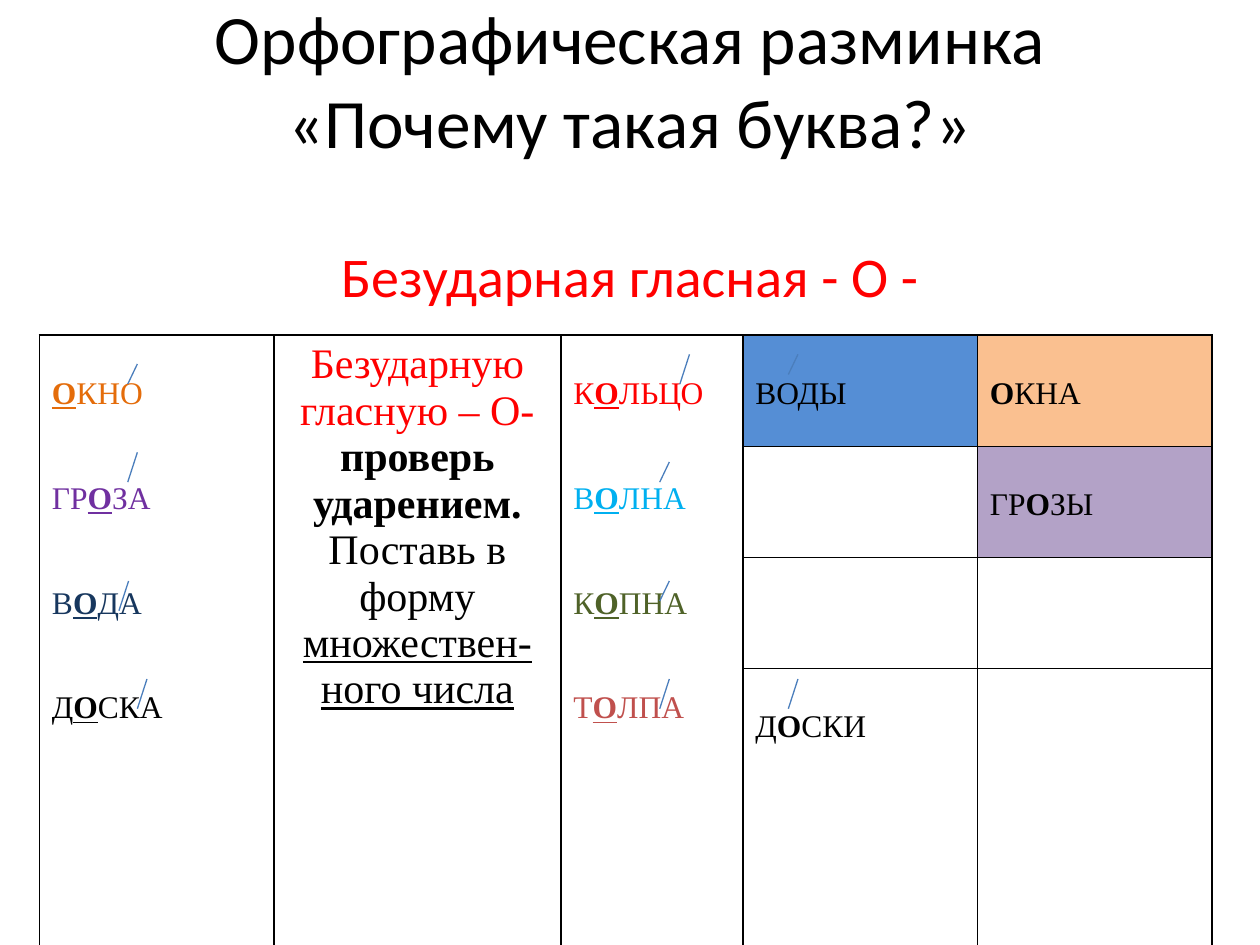
import pptx
import pptx.util
import pptx.dml.color
import pptx.enum.shapes
import pptx.enum.text
import pptx.oxml
import pptx.oxml.ns
from lxml import etree

Pt = pptx.util.Pt
ALIGN = pptx.enum.text.PP_ALIGN
ANCHOR = pptx.enum.text.MSO_ANCHOR

COLORS = {
    "black": "000000", "red": "FF0000", "orange": "E46C0A", "purple": "7030A0",
    "navy": "17375E", "sky": "00B0F0", "olive": "4F6228", "brick": "C0504D",
    "accent": "4B7EBC", "water": "558ED5", "window": "FAC090", "storm": "B3A2C7",
}


def rgb(name):
    """Return the named colour."""
    return pptx.dml.color.RGBColor.from_string(COLORS[name])


def write(paragraph, text, font="Times New Roman", size=18, color="black", bold=False, underline=False):
    """Add a formatted run to a paragraph."""
    run = paragraph.add_run()
    run.text = text
    run.font.name = font
    run.font.size = Pt(size)
    run.font.color.rgb = rgb(color)
    run.font.bold = bold
    run.font.underline = underline


class SpellingSlide:
    """Hold the style and the slide, and add its elements."""

    heading_font = "Calibri"
    word_top = 23.5
    word_gap = 40
    accent_run = 5.5

    def __init__(self, presentation):
        """Add a blank slide."""
        self.slide = presentation.slides.add_slide(presentation.slide_layouts[6])

    def heading(self, lines, left, top, width, height, size, color="black", anchor=ANCHOR.TOP):
        """Add a centred heading with line breaks."""
        frame = self.slide.shapes.add_textbox(Pt(left), Pt(top), Pt(width), Pt(height)).text_frame
        frame.word_wrap = True
        frame.vertical_anchor = anchor
        paragraph = frame.paragraphs[0]
        paragraph.alignment = ALIGN.CENTER
        for index, line in enumerate(lines):
            if index:
                paragraph.add_line_break()
            write(paragraph, line, font=self.heading_font, size=size, color=color)

    def grid(self, left, top, widths, heights):
        """Add a plain table with thin black borders."""
        table = self.slide.shapes.add_table(
            len(heights), len(widths), Pt(left), Pt(top), Pt(sum(widths)), Pt(sum(heights))).table
        table.first_row = table.horz_banding = False
        for column, width in zip(table.columns, widths):
            column.width = Pt(width)
        for row, height in zip(table.rows, heights):
            row.height = Pt(height)
        for cell in table.iter_cells():
            self.border(cell)
            cell.fill.background()
        return table

    def border(self, cell):
        """Outline all four sides of a cell."""
        properties = cell._tc.get_or_add_tcPr()
        for side in ("a:lnL", "a:lnR", "a:lnT", "a:lnB"):
            line = etree.SubElement(properties, pptx.oxml.ns.qn(side), w=str(Pt(1)))
            fill = etree.SubElement(line, pptx.oxml.ns.qn("a:solidFill"))
            etree.SubElement(fill, pptx.oxml.ns.qn("a:srgbClr"), val=COLORS["black"])

    def words(self, cell, entries, underline=False, marked=True):
        """List words in a cell, marking the first О of each."""
        cell.margin_top = Pt(self.word_top)
        for index, (word, color) in enumerate(entries):
            paragraph = cell.text_frame.add_paragraph() if index else cell.text_frame.paragraphs[0]
            if index:
                paragraph.space_before = Pt(self.word_gap)
            before, vowel, after = word.partition("О") if marked else (word, "", "")
            for part, stressed in ((before, False), (vowel, True), (after, False)):
                if part:
                    write(paragraph, part, color=color, bold=stressed, underline=stressed and underline)

    def rule(self, cell, parts):
        """Write the centred spelling rule."""
        paragraph = cell.text_frame.paragraphs[0]
        paragraph.alignment = ALIGN.CENTER
        for text, style in parts:
            write(paragraph, text, size=24, **style)

    def accent(self, x, y, height):
        """Draw a slanted stress mark."""
        mark = self.slide.shapes.add_connector(
            pptx.enum.shapes.MSO_CONNECTOR.STRAIGHT,
            Pt(x), Pt(y), Pt(x - self.accent_run), Pt(y + height))
        mark.line.color.rgb = rgb("accent")
        mark.line.width = Pt(0.75)
        etree.SubElement(mark._element.spPr, pptx.oxml.ns.qn("a:effectLst"))


def main():
    """Build and save the slide."""
    presentation = pptx.Presentation()
    presentation.slide_width, presentation.slide_height = Pt(720), Pt(540)
    page = SpellingSlide(presentation)

    page.heading(["Орфографическая разминка", "«Почему такая буква?»"],
                 54, 22.5, 612, 45, 39.6, anchor=ANCHOR.MIDDLE)
    page.heading(["Безударная гласная - О -"], 108, 134.6, 504, 309, 32, color="red")

    table = page.grid(22.5, 191.5, [134, 164, 104, 134, 134], [63.5, 63.5, 63.5, 160])
    for column in range(3):
        table.cell(0, column).merge(table.cell(3, column))

    page.words(table.cell(0, 0), [("ОКНО", "orange"), ("ГРОЗА", "purple"),
                                  ("ВОДА", "navy"), ("ДОСКА", "black")], underline=True)
    page.rule(table.cell(0, 1), [
        ("Безударную гласную – О- ", {"color": "red"}),
        ("проверь ударением. ", {"bold": True}),
        ("Поставь в форму ", {}),
        ("множествен- ного числа", {"underline": True}),
    ])
    page.words(table.cell(0, 2), [("КОЛЬЦО", "red"), ("ВОЛНА", "sky"),
                                  ("КОПНА", "olive"), ("ТОЛПА", "brick")], underline=True)

    answers = [(0, 3, "ВОДЫ", "water", False), (0, 4, "ОКНА", "window", True),
               (1, 4, "ГРОЗЫ", "storm", True), (3, 3, "ДОСКИ", None, True)]
    for row, column, word, fill, marked in answers:
        cell = table.cell(row, column)
        page.words(cell, [(word, "black")], marked=marked)
        if fill:
            cell.fill.solid()
            cell.fill.fore_color.rgb = rgb(fill)

    for x, y, height in [
        (78.5, 208, 11.5), (78.5, 258.5, 17), (73.5, 332, 17), (84, 388, 17),
        (394, 202.5, 17), (382.5, 264, 11.5), (382.5, 332, 11.5), (382.5, 388, 17),
        (456, 202.5, 11.5), (456, 388, 17),
    ]:
        page.accent(x, y, height)

    presentation.save("out.pptx")


if __name__ == "__main__":
    main()
